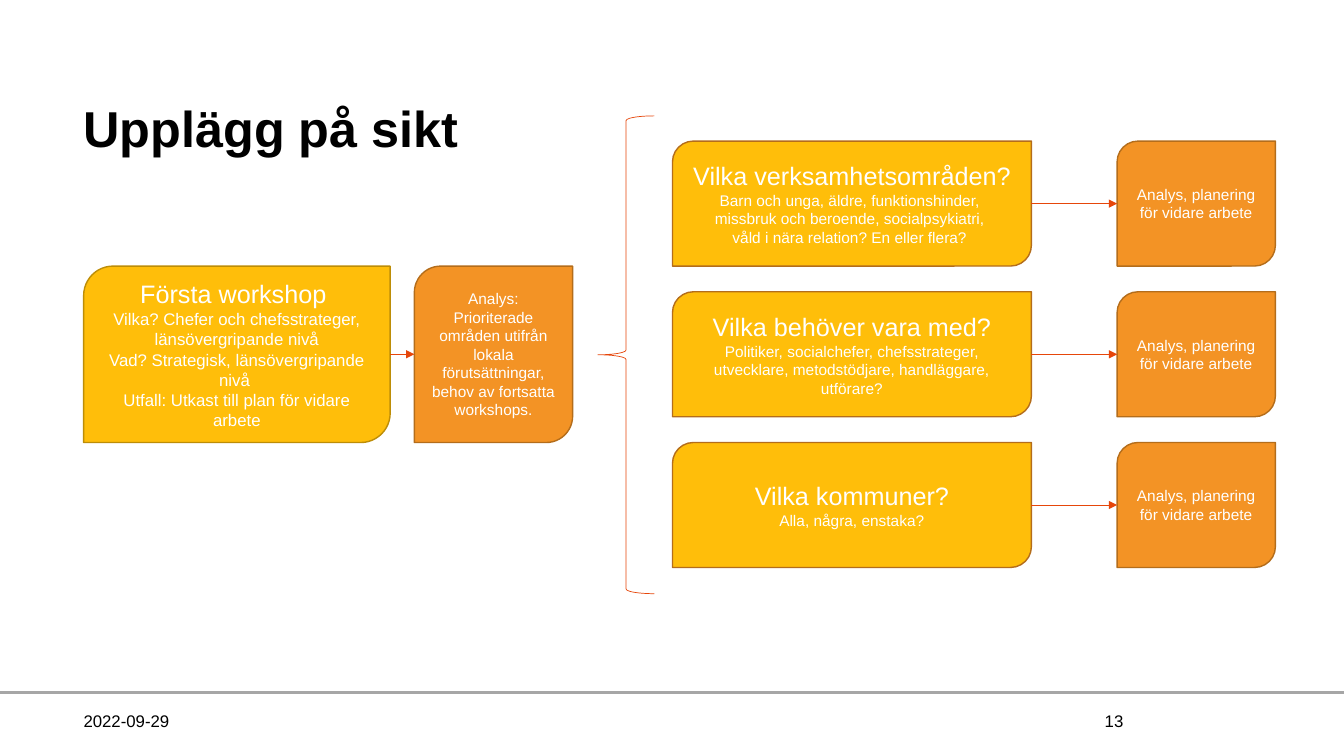
from pptx import Presentation
from pptx.dml.color import RGBColor
from pptx.enum.shapes import MSO_CONNECTOR, MSO_SHAPE
from pptx.enum.text import MSO_ANCHOR, PP_ALIGN
from pptx.util import Inches, Pt
from lxml import etree

NS = "http://schemas.openxmlformats.org/drawingml/2006/main"
FONT = "Arial"
COLORS = {
    "yellow": "FFBE0A", "orange": "F39325",
    "olive": "BD8D07", "brown": "B46D1B",
    "red": "E6460A", "gray": "A6A6A6",
    "black": "000000", "white": "FFFFFF",
}

# Right-hand rows: heading and details
ROWS = [
    ["Vilka verksamhetsområden?",
     "Barn och unga, äldre, funktionshinder, ",
     "missbruk och beroende, socialpsykiatri, ",
     "våld i nära relation? En eller flera? "],
    ["Vilka behöver vara med?",
     "Politiker, socialchefer, chefsstrateger, utvecklare, "
     "metodstödjare, handläggare, utförare?"],
    ["Vilka kommuner?", "Alla, några, enstaka?"],
]
FIRST = [
    "Första workshop ",
    "Vilka? Chefer och chefsstrateger, länsövergripande nivå",
    "Vad? Strategisk, länsövergripande nivå ",
    "Utfall: Utkast till plan för vidare arbete",
]
ANALYSIS = ("Analys: Prioriterade områden utifrån lokala förutsättningar, "
            "behov av fortsatta workshops.")
NEXT = "Analys, planering för vidare arbete"
ROW_TOP, ROW_STEP, ROW_HIGH = 1.4, 2.99 / 2, 1.24


def rgb(name):
    return RGBColor.from_string(COLORS[name])


def style(para, size, color, align, bold=False):
    para.alignment = align
    for run in para.runs:
        font = run.font
        font.name, font.size, font.bold = FONT, Pt(size), bold
        font.color.rgb = rgb(color)


def add_text(slide, place, text, size, align=PP_ALIGN.LEFT,
             anchor=MSO_ANCHOR.MIDDLE, bold=False):
    frame = slide.shapes.add_textbox(*map(Inches, place)).text_frame
    frame.word_wrap = True
    frame.vertical_anchor = anchor
    frame.text = text
    style(frame.paragraphs[0], size, "black", align, bold)
    return frame


def add_box(slide, place, lines, sizes, fill, edge="brown"):
    """Draw a box; sizes holds the first line's size and the others' size."""
    box = slide.shapes.add_shape(MSO_SHAPE.ROUND_2_DIAG_RECTANGLE,
                                 *map(Inches, place))
    box.shadow.inherit = False
    box.fill.solid()
    box.fill.fore_color.rgb = rgb(fill)
    box.line.color.rgb = rgb(edge)
    box.line.width = Pt(1)
    frame = box.text_frame
    frame.word_wrap = True
    frame.vertical_anchor = MSO_ANCHOR.MIDDLE
    frame.text = "\n".join(lines)
    for index, para in enumerate(frame.paragraphs):
        style(para, sizes[min(index, 1)], "white", PP_ALIGN.CENTER)
    return box


def add_line(slide, ends, color, width):
    line = slide.shapes.add_connector(MSO_CONNECTOR.STRAIGHT,
                                      *map(Inches, ends))
    line.line.color.rgb = rgb(color)
    line.line.width = Pt(width)
    etree.SubElement(line.element.spPr, f"{{{NS}}}effectLst")
    return line


def add_arrow(slide, start, end):
    arrow = add_line(slide, (0, 0, 1, 0), "red", 0.5)
    arrow.begin_connect(start, 3)
    arrow.end_connect(end, 1)
    etree.SubElement(arrow.line._get_or_add_ln(), f"{{{NS}}}tailEnd",
                     type="triangle")


def add_brace(slide, place):
    brace = slide.shapes.add_shape(MSO_SHAPE.LEFT_BRACE, *map(Inches, place))
    brace.shadow.inherit = False
    brace.fill.background()
    brace.line.color.rgb = rgb("red")
    brace.line.width = Pt(0.5)


def main():
    prs = Presentation()
    prs.slide_width, prs.slide_height = Inches(13.33), Inches(7.5)
    slide = prs.slides.add_slide(prs.slide_layouts[6])

    # Title and footer
    add_line(slide, (0, 6.87, 13.33, 6.87), "gray", 1.5)
    title = add_text(slide, (0.73, 0.96, 10.51, 1.35), "Upplägg på sikt", 36,
                     anchor=MSO_ANCHOR.TOP, bold=True)
    title.paragraphs[0].line_spacing = 0.95
    add_text(slide, (0.73, 6.95, 1.39, 0.4), "2022-09-29", 12)
    add_text(slide, (9.85, 6.95, 1.39, 0.4), "13", 12, PP_ALIGN.RIGHT)

    # First workshop and its analysis
    first = add_box(slide, (0.83, 2.64, 3.04, 1.75), FIRST, (18, 12),
                    "yellow", "olive")
    study = add_box(slide, (4.11, 2.64, 1.57, 1.75), [ANALYSIS], (11, 11),
                    "orange")
    add_arrow(slide, first, study)

    # Questions and the work that follows
    add_brace(slide, (5.93, 1.15, 0.56, 4.74))
    for row, lines in enumerate(ROWS):
        top = ROW_TOP + row * ROW_STEP
        topic = add_box(slide, (6.67, top, 3.56, ROW_HIGH), lines, (18, 11),
                        "yellow")
        plan = add_box(slide, (11.08, top, 1.57, ROW_HIGH), [NEXT], (11, 11),
                       "orange")
        add_arrow(slide, topic, plan)

    prs.save("out.pptx")


if __name__ == "__main__":
    main()
